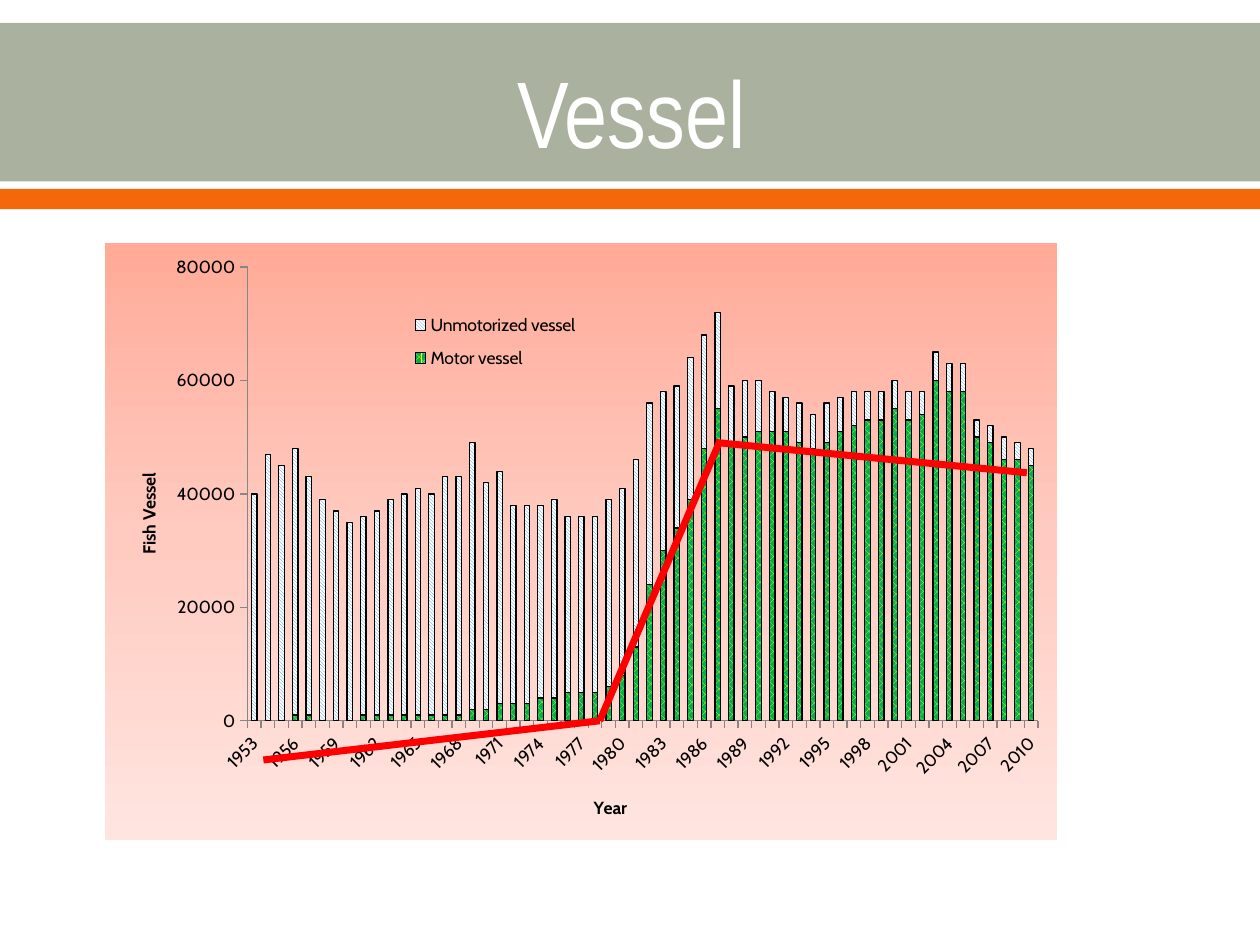
from lxml import etree
from pptx import Presentation
from pptx import util as u
from pptx.chart import data as cd
from pptx.dml.color import RGBColor
from pptx.enum import chart as ch, dml, shapes, text
from pptx.oxml import parse_xml
from pptx.oxml.ns import nsdecls, qn

Cm, Pt = u.Cm, u.Pt
SAGE = RGBColor(0xAB, 0xB1, 0x9F)
ORANGE = RGBColor(0xF4, 0x68, 0x0B)
WHITE = RGBColor(0xFF, 0xFF, 0xFF)
BLACK = RGBColor(0, 0, 0)
GREY = RGBColor(0x86, 0x86, 0x86)
RED = RGBColor(0xFF, 0, 0)
YELLOW = RGBColor(0xFF, 0xFF, 0)
GREEN = RGBColor(0, 0xB0, 0x50)
BLUE = RGBColor(0x33, 0x8F, 0xD9)
GLOW = [(0, RGBColor(0xFF, 0xAB, 0x98)), (50, RGBColor(0xFF, 0xCB, 0xC1)),
        (100, RGBColor(0xFF, 0xE5, 0xE0))]

BANDS = [(0.46, 3.2, SAGE), (3.81, 0.41, ORANGE)]
YEARS = [str(y) for y in range(1953, 2011)]
MOTOR = [0, 0, 0, 1, 1, 0, 0, 0, 1, 1, 1, 1, 1, 1, 1, 1, 2, 2, 3, 3,
         3, 4, 4, 5, 5, 5, 6, 8, 13, 24, 30, 34, 39, 48, 55, 49, 50, 51, 51, 51,
         49, 48, 49, 51, 52, 53, 53, 55, 53, 54, 60, 58, 58, 50, 49, 46, 46, 45]
PLAIN = [40, 47, 45, 47, 42, 39, 37, 35, 35, 36, 38, 39, 40, 39, 42, 42, 47, 40, 41, 35,
         35, 34, 35, 31, 31, 31, 33, 33, 33, 32, 28, 25, 25, 20, 17, 10, 10, 9, 7, 6,
         7, 6, 7, 6, 6, 5, 5, 5, 5, 4, 5, 5, 5, 3, 3, 4, 3, 3]
SERIES = [
    ("Motor vessel", MOTOR, dml.MSO_PATTERN.PERCENT_70, YELLOW, GREEN),
    ("Unmotorized vessel", PLAIN, dml.MSO_PATTERN.LIGHT_DOWNWARD_DIAGONAL, BLUE, WHITE),
]
TRENDS = [((12.09, 14.53), (14.5, 8.92)),
          ((5.31, 15.32), (12.09, 14.53)),
          ((14.43, 8.92), (20.7, 9.53))]


def style(obj, **vals):
    for key, val in vals.items():
        setattr(obj, key, val)


def place(node, **vals):
    for old in node.findall(qn("c:layout")):
        node.remove(old)
    lay = parse_xml(f"<c:layout {nsdecls('c')}><c:manualLayout/></c:layout>")
    for key, val in vals.items():
        etree.SubElement(lay[0], qn("c:" + key)).set("val", str(val))
    return lay


def add_bands(slide):
    for top, high, color in BANDS:
        band = slide.shapes.add_shape(shapes.MSO_SHAPE.RECTANGLE, 0, Cm(top), Cm(25.4), Cm(high))
        band.shadow.inherit = False
        band.fill.solid()
        band.fill.fore_color.rgb = color
        band.line.fill.background()


def add_title(slide):
    frame = slide.shapes.add_textbox(Cm(1.3), Cm(0.74), Cm(22.86), Cm(2.97)).text_frame
    style(frame, word_wrap=True, vertical_anchor=text.MSO_ANCHOR.MIDDLE)
    para = frame.paragraphs[0]
    style(para, text="Vessel", alignment=text.PP_ALIGN.CENTER)
    style(para.runs[0].font, name="Arial Narrow", size=Pt(54))
    para.runs[0].font.color.rgb = WHITE


def set_axis(axis, name, **spot):
    style(axis, has_major_gridlines=False, major_tick_mark=ch.XL_TICK_MARK.OUTSIDE,
          minor_tick_mark=ch.XL_TICK_MARK.NONE)
    style(axis.format.line, width=Pt(0.75))
    axis.format.line.color.rgb = GREY
    frame = axis.axis_title.text_frame
    frame.text = name
    font = frame.paragraphs[0].runs[0].font
    style(font, name="Cabin", size=Pt(10), bold=True)
    font.color.rgb = BLACK
    title = axis.axis_title._element
    lay = place(title, xMode="edge", yMode="edge", **spot)
    title.find(qn("c:tx")).addnext(lay)


def add_chart(slide):
    data = cd.CategoryChartData()
    data.categories = YEARS
    for name, vals, *_ in SERIES:
        data.add_series(name, [v * 1000 for v in vals])
    chart = slide.shapes.add_chart(ch.XL_CHART_TYPE.COLUMN_STACKED, Cm(2.11), Cm(4.9),
                                   Cm(19.2), Cm(12.04), data).chart
    style(chart, has_title=False, has_legend=True)
    style(chart.font, name="Cabin", size=Pt(10))
    chart.font.color.rgb = BLACK
    plot = chart.plots[0]
    style(plot, gap_width=150, overlap=100, vary_by_categories=False)
    for item, (_, _, kind, fore, back) in zip(plot.series, SERIES):
        fill, line = item.format.fill, item.format.line
        fill.patterned()
        fill.pattern = kind
        fill.fore_color.rgb, fill.back_color.rgb = fore, back
        line.width = Pt(0.75)
        line.color.rgb = BLACK

    cat, val = chart.category_axis, chart.value_axis
    set_axis(cat, "Year", x=0.51, y=0.92)
    set_axis(val, "Fish Vessel", x=0.03, y=0.38)
    style(val, minimum_scale=0, maximum_scale=80000, major_unit=20000)
    style(val.tick_labels, number_format="0", number_format_is_linked=False)
    cat.tick_labels.font.size = Pt(10)
    cat._element.find(qn("c:txPr")).find(qn("a:bodyPr")).set("rot", "-2700000")
    skip = parse_xml(f'<c:tickLblSkip {nsdecls("c")} val="3"/>')
    cat._element.find(qn("c:noMultiLvlLbl")).addprevious(skip)

    style(chart.legend, position=ch.XL_LEGEND_POSITION.RIGHT, include_in_layout=False)
    key = chart.legend._element
    lay = place(key, xMode="edge", yMode="edge", x=0.31, y=0.1, w=0.2, h=0.13)
    key.find(qn("c:legendPos")).addnext(lay)
    key.find(qn("c:overlay")).set("val", "1")

    root = chart._chartSpace
    area = root.find(qn("c:chart")).find(qn("c:plotArea"))
    area.insert(0, place(area, layoutTarget="inner", xMode="edge", yMode="edge",
                         x=0.15, y=0.04, w=0.83, h=0.76))
    stops = "".join(f'<a:gs pos="{pos * 1000}"><a:srgbClr val="{color}"/></a:gs>'
                    for pos, color in GLOW)
    root.find(qn("c:chart")).addnext(parse_xml(
        f'<c:spPr {nsdecls("c", "a")}><a:gradFill><a:gsLst>{stops}</a:gsLst>'
        '<a:lin ang="5400000" scaled="0"/></a:gradFill><a:ln><a:noFill/></a:ln></c:spPr>'))


def add_trends(slide):
    for start, end in TRENDS:
        line = slide.shapes.add_connector(shapes.MSO_CONNECTOR.STRAIGHT,
                                          *(Cm(v) for v in start + end))
        line.line.width = Pt(4)
        line.line.color.rgb = RED
        etree.SubElement(line._element.spPr, qn("a:effectLst"))


def main():
    deck = Presentation()
    style(deck, slide_width=Cm(25.4), slide_height=Cm(19.05))
    slide = deck.slides.add_slide(deck.slide_layouts[6])
    for step in (add_bands, add_title, add_chart, add_trends):
        step(slide)
    deck.save("out.pptx")


if __name__ == "__main__":
    main()
